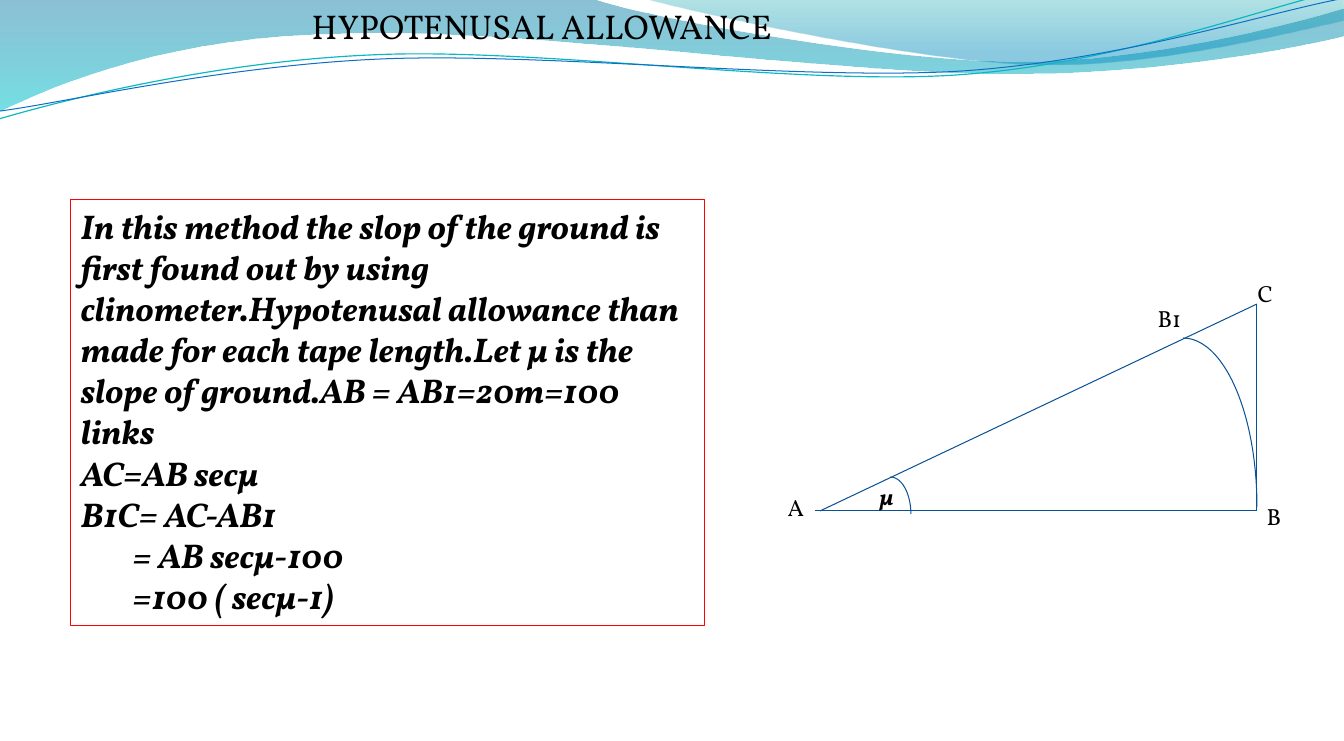
import dataclasses

import lxml.etree
import pptx
import pptx.dml.color
import pptx.enum.shapes
import pptx.enum.text
import pptx.oxml.ns
import pptx.util

PX = 9255  # EMU per px


@dataclasses.dataclass(frozen=True)
class Theme:
    font: str = "Vollkorn"
    text: str = "000000"
    frame: str = "FF0000"
    diagram: str = "095295"
    teal_wave: str = "0AB8BF"
    blue_wave: str = "0F6FC6"
    # gradient stops: position %, colour, opacity %
    wide_band: tuple = ((0, "0074A1", 45), (100, "00C6CF", 55))
    right_band: tuple = ((0, "00A1A9", 30), (80, "008BBF", 45))
    body_size: int = 25
    label_size: int = 17
    hairline: float = 0.75
    teal_line: float = 0.85


THEME = Theme()

# each part is the points of a line (one) or of a cubic curve (three)
WIDE_BAND = [[(0, 0)], [(592, -1)],
             [(639, 17), (891, 62), (1019, 62)],
             [(1146, 62), (1287, 26), (1344, 9)], [(1345, 36)],
             [(1321, 43), (1169, 75), (1002, 74)],
             [(836, 74), (513, 28), (346, 34)],
             [(174, 36), (61, 82), (-1, 112)], [(0, 0)]]
RIGHT_BAND = [[(644, -1)],
              [(685, 11), (916, 61), (1033, 64)],
              [(1150, 68), (1292, 32), (1344, 21)], [(1344, 0)], [(644, -1)]]
TEAL_WAVE = [[(-1, 119)],
             [(64, 100), (212, 62), (371, 55)],
             [(532, 47), (795, 86), (957, 75)],
             [(1118, 64), (1262, 8), (1342, -10)]]
BLUE_WAVE = [[(0, 111)],
             [(63, 103), (220, 66), (380, 59)],
             [(541, 52), (802, 81), (962, 71)],
             [(1123, 60), (1265, 13), (1345, -2)]]

# paragraph text, left indent in px
EXPLANATION = [
    ("In this method the slop of the ground is first found out by using "
     "clinometer.Hypotenusal allowance than made for each tape length."
     "Let µ is the slope of ground.AB = AB1=20m=100 links", 0),
    ("AC=AB secµ", 0),
    ("B1C= AC-AB1", 0),
    ("= AB secµ-100", 52),
    ("=100 ( secµ-1)", 52),
]

CORNER_B, CORNER_C = (1257, 511), (1257, 304)
TRIANGLE_SIDES = [((815, 511), CORNER_B), (CORNER_B, CORNER_C), ((820, 511), CORNER_C)]
ARCS = [(1109, 338, 148, 338), (870, 477, 41, 74)]
LABELS = [("B", 1257, 497, False), ("C", 1248, 274, False), ("B1", 1148, 299, False),
          ("A", 778, 488, False), ("µ", 870, 477, True)]


def rgb(colour):
    return pptx.dml.color.RGBColor.from_string(colour)


def emu(*lengths):
    return [length * PX for length in lengths]


def set_line(line, colour, width=THEME.hairline):
    line.color.rgb = rgb(colour)
    line.width = pptx.util.Pt(width)


def add_outline(slide, path, close):
    """Draw the path through its end points, then bend the curved parts."""
    start, *ends = [part[-1] for part in path]
    builder = slide.shapes.build_freeform(*start, scale=PX)
    builder.add_line_segments(ends, close=close)
    outline = builder.convert_to_shape()
    outline.shadow.inherit = False

    left = min(x for x, _ in [start, *ends])
    top = min(y for _, y in [start, *ends])
    segments = list(outline.element.iter(pptx.oxml.ns.qn("a:lnTo")))
    for segment, part in zip(segments, path[1:]):
        if len(part) == 1:
            continue
        curve = lxml.etree.Element(pptx.oxml.ns.qn("a:cubicBezTo"))
        for x, y in part:
            lxml.etree.SubElement(curve, pptx.oxml.ns.qn("a:pt"),
                                  x=str(x - left), y=str(y - top))
        segment.getparent().replace(segment, curve)
    return outline


def add_band(slide, path, stops):
    band = add_outline(slide, path, close=True)
    band.line.fill.background()
    band.fill.gradient()
    band.fill.gradient_angle = 270
    for stop, (position, colour, _) in zip(band.fill.gradient_stops, stops):
        stop.position = position / 100
        stop.color.rgb = rgb(colour)
    colours = band.element.spPr.iter(pptx.oxml.ns.qn("a:srgbClr"))
    for colour, (_, _, opacity) in zip(colours, stops):
        alpha = lxml.etree.SubElement(colour, pptx.oxml.ns.qn("a:alpha"))
        alpha.set("val", str(opacity * 1000))


def add_wave(slide, path, colour, width):
    wave = add_outline(slide, path, close=False)
    wave.fill.background()
    set_line(wave.line, colour, width)


def write(frame, paragraphs, size, emphasis=False):
    """Fill a text frame; emphasis means bold italic."""
    frame.word_wrap = True
    frame.vertical_anchor = pptx.enum.text.MSO_ANCHOR.TOP
    for index, (text, indent) in enumerate(paragraphs):
        paragraph = frame.add_paragraph() if index else frame.paragraphs[0]
        paragraph.alignment = pptx.enum.text.PP_ALIGN.LEFT
        if indent:
            paragraph._p.get_or_add_pPr().set("marL", str(indent * PX))
        run = paragraph.add_run()
        run.text = text
        run.font.name = THEME.font
        run.font.size = pptx.util.Pt(size)
        run.font.color.rgb = rgb(THEME.text)
        run.font.bold = run.font.italic = emphasis


def add_text(slide, text, box, size, emphasis=False):
    text_box = slide.shapes.add_textbox(*emu(*box))
    write(text_box.text_frame, [(text, 0)], size, emphasis)


def add_unfilled_shape(slide, preset, box, colour):
    shape = slide.shapes.add_shape(preset, *emu(*box))
    shape.shadow.inherit = False
    shape.fill.background()
    set_line(shape.line, colour)
    return shape


def add_side(slide, start, end):
    side = slide.shapes.add_connector(
        pptx.enum.shapes.MSO_CONNECTOR.STRAIGHT, *emu(*start, *end))
    set_line(side.line, THEME.diagram)
    lxml.etree.SubElement(side.element.spPr, pptx.oxml.ns.qn("a:effectLst"))


def main():
    presentation = pptx.Presentation()
    presentation.slide_width, presentation.slide_height = emu(1344, 741)
    slide = presentation.slides.add_slide(presentation.slide_layouts[6])
    shapes = pptx.enum.shapes.MSO_SHAPE

    add_band(slide, WIDE_BAND, THEME.wide_band)
    add_band(slide, RIGHT_BAND, THEME.right_band)
    add_wave(slide, TEAL_WAVE, THEME.teal_wave, THEME.teal_line)
    add_wave(slide, BLUE_WAVE, THEME.blue_wave, THEME.hairline)

    add_text(slide, "HYPOTENUSAL ALLOWANCE", (302, 0, 600, 52), THEME.body_size)
    explanation = add_unfilled_shape(
        slide, shapes.RECTANGLE, (71, 200, 634, 426), THEME.frame)
    write(explanation.text_frame, EXPLANATION, THEME.body_size, emphasis=True)

    for start, end in TRIANGLE_SIDES:
        add_side(slide, start, end)
    for box in ARCS:
        add_unfilled_shape(slide, shapes.ARC, box, THEME.diagram)
    for text, left, top, emphasis in LABELS:
        add_text(slide, text, (left, top, 48, 38), THEME.label_size, emphasis)

    presentation.save("out.pptx")


if __name__ == "__main__":
    main()
